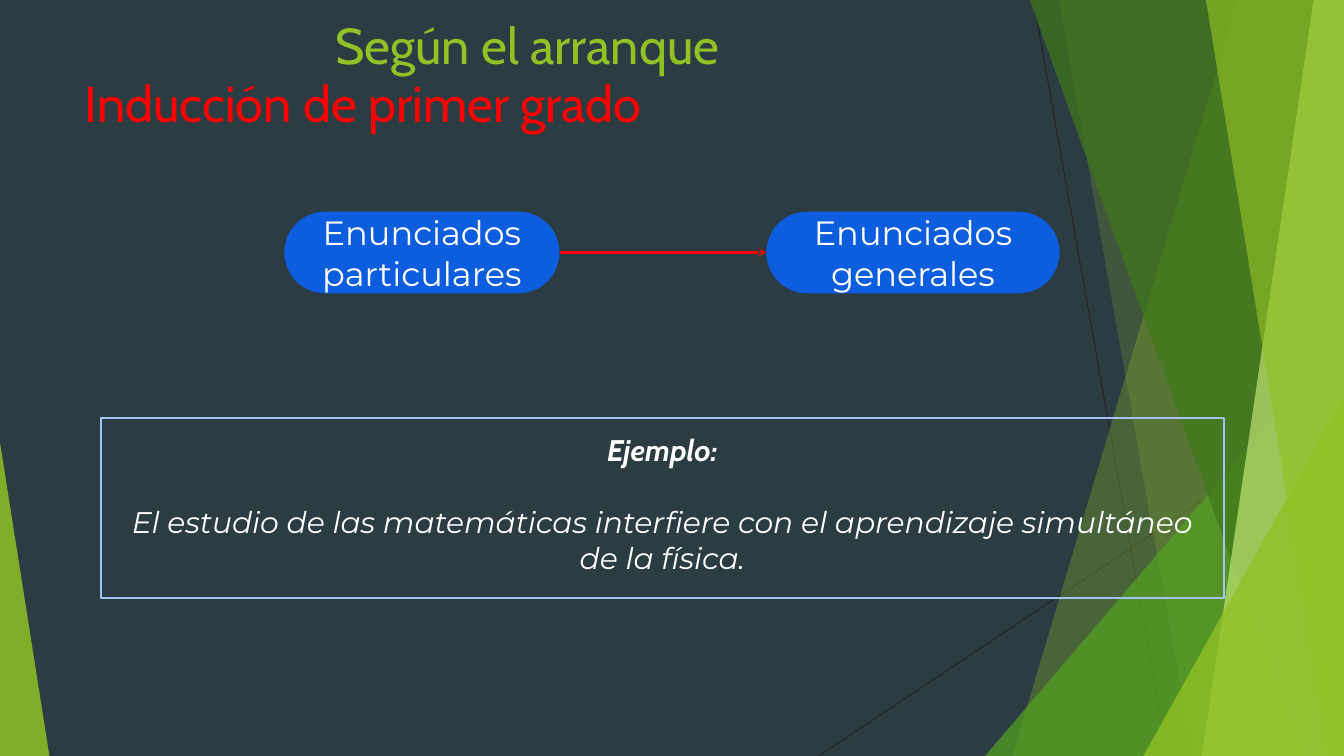
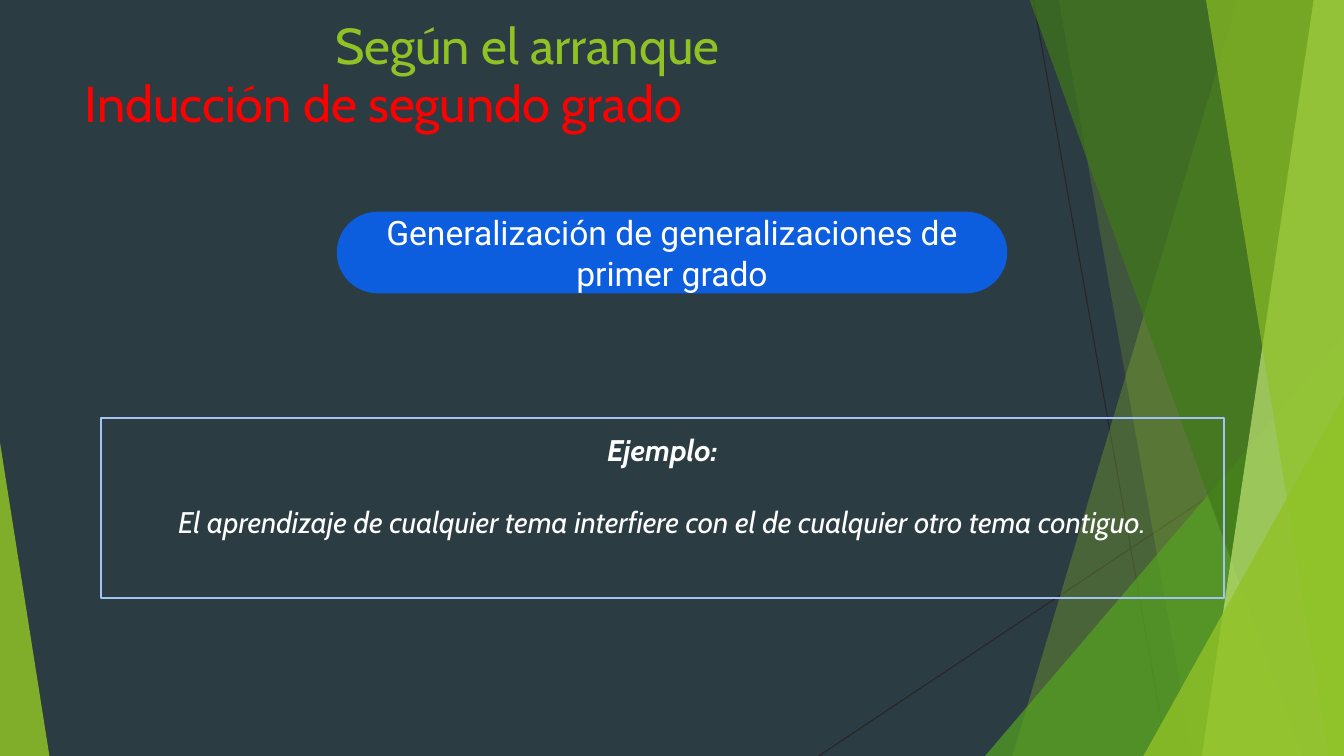
from lxml import etree
from pptx import Presentation
from pptx.dml.color import RGBColor
from pptx.enum.shapes import MSO_CONNECTOR, MSO_SHAPE
from pptx.enum.text import MSO_ANCHOR, MSO_AUTO_SIZE, PP_ALIGN
from pptx.oxml.ns import qn
from pptx.util import Inches, Pt

CENTER, LEFT = PP_ALIGN.CENTER, PP_ALIGN.LEFT
TOP, MIDDLE = MSO_ANCHOR.TOP, MSO_ANCHOR.MIDDLE
STRAIGHT = MSO_CONNECTOR.STRAIGHT
RECTANGLE, PILL = MSO_SHAPE.RECTANGLE, MSO_SHAPE.ROUNDED_RECTANGLE
TRIANGLE = MSO_SHAPE.ISOSCELES_TRIANGLE

SLATE = RGBColor(0x2C, 0x3C, 0x43)
CHARCOAL = RGBColor(0x26, 0x26, 0x26)
GREEN = RGBColor(0x90, 0xC2, 0x26)
MID_GREEN = RGBColor(0x54, 0xA0, 0x21)
DARK_GREEN = RGBColor(0x3F, 0x78, 0x19)
PALE_GREEN = RGBColor(0xC0, 0xE4, 0x74)
RED = RGBColor(0xFF, 0x00, 0x00)
BLUE = RGBColor(0x0D, 0x5D, 0xDF)
PALE_BLUE = RGBColor(0xA4, 0xC2, 0xF4)
WHITE = RGBColor(0xFF, 0xFF, 0xFF)

WIDTH, HEIGHT = 13.33, 7.5
PILL_TOP, PILL_HEIGHT = 2.1, 0.81
INSET = 0.13
HEADING = "Según el arranque"
EXAMPLE_LABEL = "Ejemplo:"

RAYS = [((10.25, 0), (11.58, HEIGHT)), ((WIDTH, 4.03), (8.12, HEIGHT))]
# kind, geometry, colour, opacity
FACETS = [
    ("band", (12.28, 10.04), GREEN, 30),
    ("band", (10.5, 11.83), GREEN, 20),
    ("corner", (9.77, 3.33, 3.56, 1), MID_GREEN, 72),
    ("band", (10.21, 12.91), DARK_GREEN, 70),
    ("band", (13.03, 11.92), PALE_GREEN, 70),
    ("band", (11.96, 13.18), GREEN, 65),
    ("corner", (11.34, 3.93, 1.99, 1), GREEN, 80),
    ("corner", (0, 4.39, 0.49, 0), GREEN, 85),
]
SLIDES = [
    {
        "title": "Inducción de primer grado",
        "pills": [("Enunciados particulares", 2.82, 2.73), ("Enunciados generales", 7.6, 2.91)],
        "pill_font": "Montserrat",
        "example": "El estudio de las matemáticas interfiere con el aprendizaje simultáneo de la física.",
        "example_font": "Montserrat",
    },
    {
        "title": "Inducción de segundo grado",
        "pills": [("Generalización de generalizaciones de primer grado", 3.34, 6.65)],
        "pill_font": "Roboto",
        "example": "El aprendizaje de cualquier tema interfiere con el de cualquier otro tema contiguo.",
        "example_font": "Cabin",
    },
]


def place(shape, left, top, width, height):
    shape.left, shape.top = Inches(left), Inches(top)
    shape.width, shape.height = Inches(width), Inches(height)


def format_paragraph(paragraph, font_name, size, color, align, bold=False, italic=False):
    paragraph.alignment = align
    for run in paragraph.runs:
        font = run.font
        font.name, font.size, font.bold, font.italic = font_name, Pt(size), bold, italic
        font.color.rgb = color


def set_frame(frame, anchor, inset=None):
    frame.word_wrap = True
    frame.auto_size = MSO_AUTO_SIZE.NONE
    frame.vertical_anchor = anchor
    if inset is not None:
        frame.margin_left = frame.margin_right = Inches(inset)
        frame.margin_top = frame.margin_bottom = Inches(inset)


def add_line(slide, start, end, color, width):
    line = slide.shapes.add_connector(STRAIGHT, *(Inches(value) for value in (*start, *end)))
    line.line.color.rgb = color
    line.line.width = Pt(width)
    etree.SubElement(line.element.spPr, qn("a:effectLst"))
    return line


def add_box(slide, kind, left, top, width, height):
    shape = slide.shapes.add_shape(
        kind, Inches(left), Inches(top), Inches(width), Inches(height))
    shape.shadow.inherit = False
    return shape


def add_facet(slide, kind, geometry, color, opacity):
    if kind == "band":
        top_x, bottom_x = geometry
        builder = slide.shapes.build_freeform(Inches(top_x), Inches(-0.01))
        corners = [(WIDTH, -0.01), (WIDTH, HEIGHT), (bottom_x, HEIGHT)]
        builder.add_line_segments([(Inches(x), Inches(y)) for x, y in corners], close=True)
        shape = builder.convert_to_shape()
        shape.shadow.inherit = False
    else:
        left, top, width, apex = geometry
        shape = add_box(slide, TRIANGLE, left, top, width, HEIGHT - top)
        shape.adjustments[0] = apex
    shape.fill.solid()
    shape.fill.fore_color.rgb = color
    shape.line.fill.background()
    color_element = shape.element.spPr.find(qn("a:solidFill"))[0]
    etree.SubElement(color_element, qn("a:alpha"), val=str(opacity * 1000))
    return shape


def move_to_layout(layout, shapes):
    tree = layout.shapes.element
    for index, shape in enumerate(shapes):
        shape.element.xpath(".//p:cNvPr")[0].set("id", str(100 + index))
        tree.insert(2 + index, shape.element)


def decorate_layout(layout, slide):
    layout.background.fill.solid()
    layout.background.fill.fore_color.rgb = SLATE
    decoration = [add_line(slide, start, end, CHARCOAL, 0.75) for start, end in RAYS]
    decoration += [add_facet(slide, *facet) for facet in FACETS]
    move_to_layout(layout, decoration)


def add_titles(slide, title_text):
    title = slide.shapes.title
    place(title, 0.74, 0.67, 9.4, 1.44)
    heading = slide.shapes.add_textbox(Inches(0.53), Inches(0.09), Inches(9.4), Inches(1.44))
    for shape, text, color, align in ((title, title_text, RED, LEFT),
                                      (heading, HEADING, GREEN, CENTER)):
        frame = shape.text_frame
        frame.text = text
        set_frame(frame, TOP)
        format_paragraph(frame.paragraphs[0], "Cabin", 36, color, align)


def add_pills(slide, pills, font_name):
    for text, left, width in pills:
        pill = add_box(slide, PILL, left, PILL_TOP, width, PILL_HEIGHT)
        pill.adjustments[0] = 0.5
        pill.fill.solid()
        pill.fill.fore_color.rgb = BLUE
        pill.line.fill.background()
        pill.text_frame.text = text
        set_frame(pill.text_frame, MIDDLE, INSET)
        format_paragraph(pill.text_frame.paragraphs[0], font_name, 24, WHITE, CENTER)
    middle = PILL_TOP + PILL_HEIGHT / 2
    for (_, left, width), (_, next_left, _) in zip(pills, pills[1:]):
        arrow = add_line(slide, (left + width, middle), (next_left, middle), RED, 1.5)
        etree.SubElement(arrow.line._get_or_add_ln(), qn("a:tailEnd"), type="stealth")


def add_example(slide, text, font_name):
    box = add_box(slide, RECTANGLE, 1, 4.15, 11.14, 1.78)
    box.fill.background()
    box.line.color.rgb = PALE_BLUE
    box.line.width = Pt(1.5)
    frame = box.text_frame
    set_frame(frame, TOP, INSET)
    label = frame.paragraphs[0]
    label.text = EXAMPLE_LABEL
    format_paragraph(label, "Cabin", 21.3, WHITE, CENTER, bold=True, italic=True)
    sentence = frame.add_paragraph()
    sentence.text = text
    sentence.space_before = Pt(26)
    format_paragraph(sentence, font_name, 21.3, WHITE, CENTER, italic=True)


def main():
    presentation = Presentation()
    presentation.slide_width, presentation.slide_height = Inches(WIDTH), Inches(HEIGHT)
    layout = presentation.slide_layouts.get_by_name("Title Only")
    for index, content in enumerate(SLIDES):
        slide = presentation.slides.add_slide(layout)
        if index == 0:
            decorate_layout(layout, slide)
        add_titles(slide, content["title"])
        add_pills(slide, content["pills"], content["pill_font"])
        add_example(slide, content["example"], content["example_font"])
    presentation.save("out.pptx")


if __name__ == "__main__":
    main()
